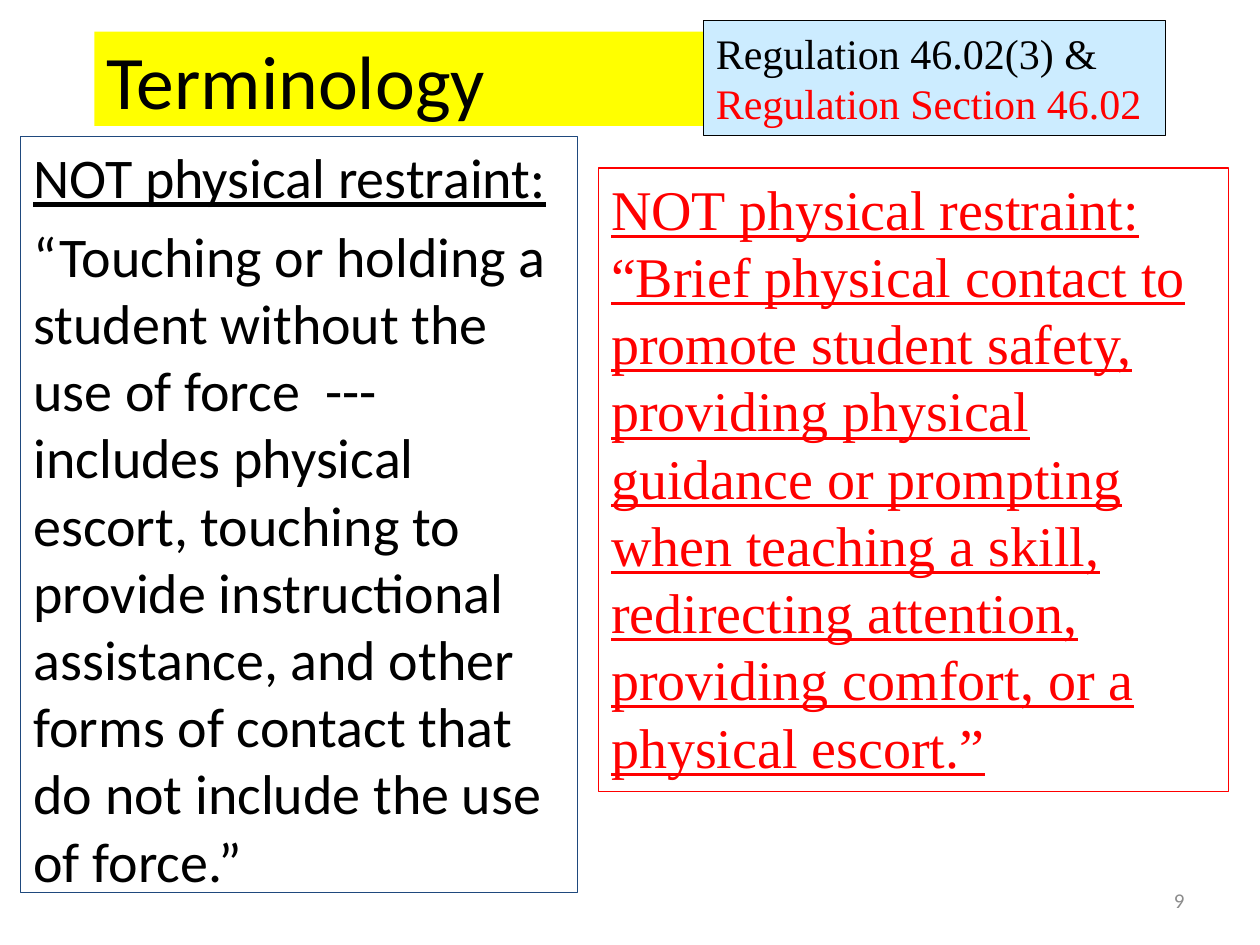
from pptx import Presentation
from pptx.dml.color import RGBColor
from pptx.enum.text import MSO_ANCHOR, MSO_AUTO_SIZE, PP_ALIGN
from pptx.oxml.xmlchemy import OxmlElement
from pptx.util import Cm, Pt

COLORS = {"black": "000000", "red": "FF0000", "yellow": "FFFF00",
          "navy": "1F497D", "sky": "CCECFF", "gray": "8C8C8C"}
SANS, SERIF = "Calibri", "Times New Roman"
LINE_HEIGHT = 1.2

# Each paragraph is a list of runs: (text, color, underlined)
TITLE = [[("Terminology", "black", False)]]
STATE_RULE = [
    [("NOT physical restraint:", "black", True)],
    [("“Touching or holding a student without the use of force  --- includes "
      "physical escort, touching to provide instructional assistance, and other "
      "forms of contact that do not include the use of force.”", "black", False)],
]
NEW_RULE = [
    [("NOT physical restraint:", "red", True)],
    [("“Brief physical contact to promote student safety, providing physical "
      "guidance or prompting when teaching a skill, redirecting attention, "
      "providing comfort, or a physical escort.”", "red", True)],
]
CITATION = [[("Regulation 46.02(3) &  ", "black", False),
             ("Regulation Section 46.02", "red", False)]]
PAGE_NUMBER = [[("9", "gray", False)]]


def place(shape, left, top, width, height, fill=None, line=None):
    shape.left, shape.top, shape.width, shape.height = map(Cm, (left, top, width, height))
    if fill:
        shape.fill.solid()
        shape.fill.fore_color.rgb = RGBColor.from_string(COLORS[fill])
    if line:
        shape.line.color.rgb = RGBColor.from_string(COLORS[line])
        shape.line.width = Pt(0.75)


def write(shape, paragraphs, font, size, anchor=MSO_ANCHOR.TOP,
          align=PP_ALIGN.LEFT, gap=0):
    """Fill the shape with paragraphs; gap is the space between them in points."""
    frame = shape.text_frame
    frame.word_wrap = True
    frame.auto_size = MSO_AUTO_SIZE.NONE
    frame.vertical_anchor = anchor
    for index, runs in enumerate(paragraphs):
        paragraph = frame.paragraphs[0] if index == 0 else frame.add_paragraph()
        paragraph.alignment = align
        paragraph.line_spacing = Pt(size * LINE_HEIGHT)
        paragraph.space_before = Pt(gap if index else 0)
        remove_bullet(paragraph)
        for text, color, underlined in runs:
            run = paragraph.add_run()
            run.text = text
            run.font.name, run.font.size = font, Pt(size)
            run.font.underline = underlined
            run.font.color.rgb = RGBColor.from_string(COLORS[color])


def remove_bullet(paragraph):
    properties = paragraph._p.get_or_add_pPr()
    properties.set("marL", "0")
    properties.set("indent", "0")
    properties.append(OxmlElement("a:buNone"))


def add_text_box(slide):
    return slide.shapes.add_textbox(0, 0, 0, 0)


def main():
    presentation = Presentation()
    presentation.slide_width, presentation.slide_height = Cm(25.4), Cm(19.05)
    slide = presentation.slides.add_slide(presentation.slide_layouts[1])

    title = slide.shapes.title
    place(title, 1.9, 0.64, 21.6, 1.9, fill="yellow")
    write(title, TITLE, SANS, 43.2, anchor=MSO_ANCHOR.MIDDLE)

    state_rule = slide.placeholders[1]
    place(state_rule, 0.42, 2.75, 11.22, 15.24, line="navy")
    write(state_rule, STATE_RULE, SANS, 32, gap=6.4)

    page_number = add_text_box(slide)
    place(page_number, 18.2, 17.65, 5.93, 1.01)
    write(page_number, PAGE_NUMBER, SANS, 12, MSO_ANCHOR.MIDDLE, PP_ALIGN.RIGHT)

    new_rule = add_text_box(slide)
    place(new_rule, 12.07, 3.39, 12.7, 12.57, line="red")
    write(new_rule, NEW_RULE, SERIF, 32)

    citation = add_text_box(slide)
    place(citation, 14.18, 0.42, 9.32, 2.31, fill="sky", line="black")
    write(citation, CITATION, SERIF, 24)

    presentation.save("out.pptx")


if __name__ == "__main__":
    main()
